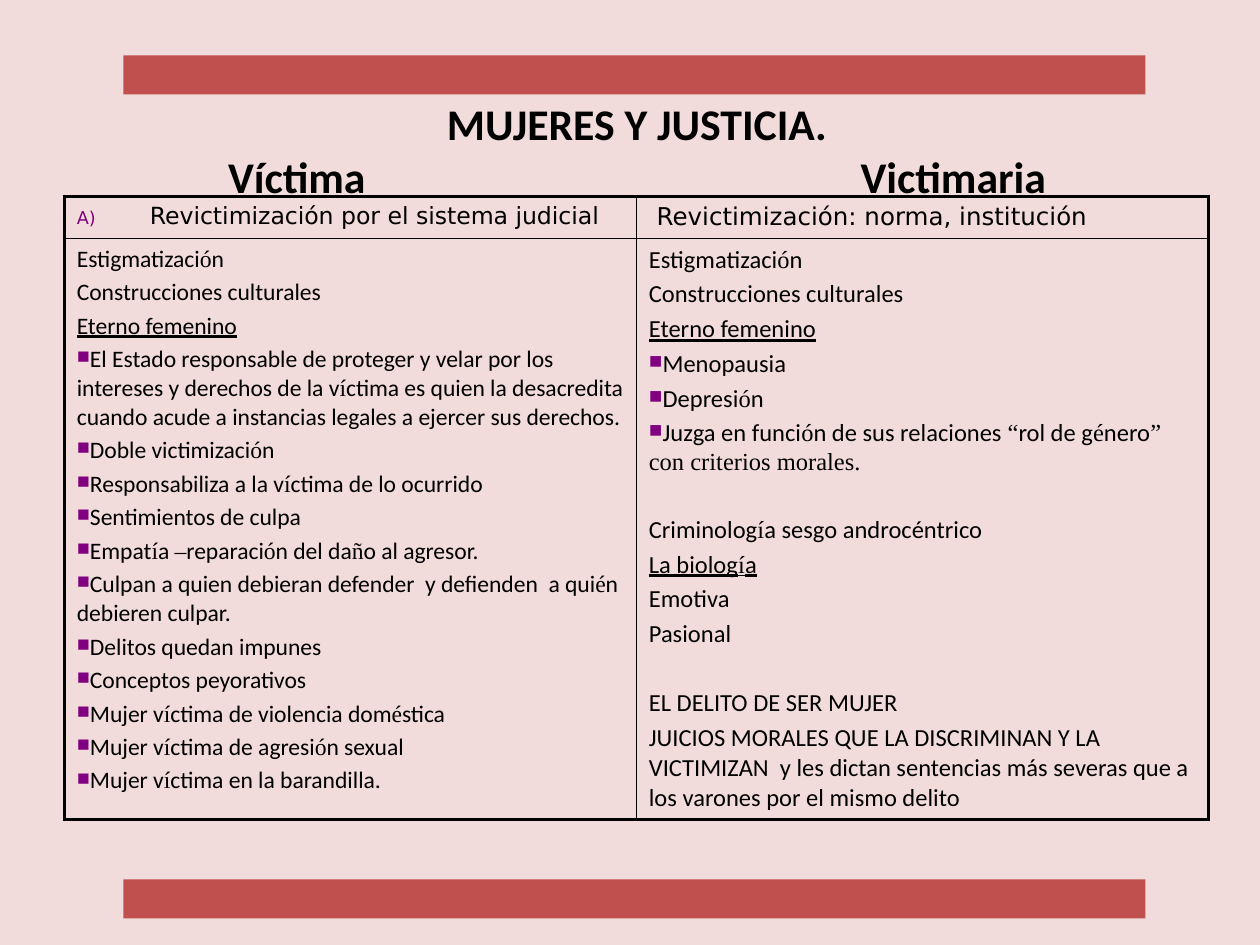
from lxml import etree
from pptx import Presentation
from pptx import util as u
from pptx.dml.color import RGBColor
from pptx.enum import shapes, text
from pptx.oxml import ns

COLORS = {"background": "F2DCDB", "bar": "C0504D", "ink": "000000", "bullet": "800080"}
BODY, HEADING, ACCENT = "Calibri", "DejaVu Sans", "Times New Roman"
OUTER, INNER = 2.25, 1

# Paragraph marks: "*" bullet, "_" underline, "^" blank line's gap above;
# text in braces takes the accent font.
VICTIM = [
    "Estigmatizaci{ó}n",
    "Construcciones culturales",
    "_Eterno femenino",
    "*El Estado responsable de proteger y velar por los intereses y derechos de la "
    "v{í}ctima es quien la desacredita cuando acude a instancias legales a ejercer "
    "sus derechos.",
    "*Doble victimizaci{ó}n",
    "*Responsabiliza a la v{í}ctima de lo ocurrido",
    "*Sentimientos de culpa",
    "*Empat{í}a {–}reparaci{ó}n del da{ñ}o al agresor.",
    "*Culpan a quien debieran defender  y defienden  a qui{é}n  debieren culpar.",
    "*Delitos quedan impunes",
    "*Conceptos peyorativos",
    "*Mujer v{í}ctima de violencia dom{é}stica",
    "*Mujer v{í}ctima de agresi{ó}n sexual",
    "*Mujer v{í}ctima en la barandilla.",
]
OFFENDER = [
    "Estigmatizaci{ó}n",
    "Construcciones culturales",
    "_Eterno femenino",
    "*Menopausia",
    "*Depresi{ó}n",
    "*Juzga en funci{ó}n de sus relaciones {“}rol de g{é}nero{” con criterios morales.}",
    "^Criminolog{í}a sesgo androcéntrico",
    "_La biolog{í}a",
    "Emotiva",
    "Pasional",
    "^EL DELITO DE SER MUJER",
    "JUICIOS MORALES QUE LA DISCRIMINAN Y LA VICTIMIZAN  y les dictan sentencias "
    "más severas que a los varones por el mismo delito",
]


def rgb(name):
    return RGBColor.from_string(COLORS[name])


def style(paragraph, size, name=BODY, bold=False):
    font = paragraph.font
    font.size, font.name, font.bold = u.Pt(size), name, bold
    font.color.rgb = rgb("ink")


def add_bullet(paragraph, tag, **attributes):
    props = paragraph._p.get_or_add_pPr()
    color = etree.SubElement(props, ns.qn("a:buClr"))
    etree.SubElement(color, ns.qn("a:srgbClr"), val=COLORS["bullet"])
    etree.SubElement(props, ns.qn("a:buSzPct"), val="75000")
    etree.SubElement(props, ns.qn(tag), **attributes)


def add_bar(slide, left, top, width, height):
    bar = slide.shapes.add_shape(shapes.MSO_SHAPE.RECTANGLE, left, top, width, height)
    bar.shadow.inherit = False
    bar.fill.solid()
    bar.fill.fore_color.rgb = rgb("bar")
    bar.line.fill.background()


def add_title(slide, left, top, width, height):
    frame = slide.shapes.add_textbox(left, top, width, height).text_frame
    frame.word_wrap = True
    frame.margin_left = frame.margin_right = frame.margin_top = frame.margin_bottom = 0
    title = frame.paragraphs[0]
    title.text = "MUJERES Y JUSTICIA."
    title.alignment = text.PP_ALIGN.CENTER
    # Column names sit on tab stops
    columns = frame.add_paragraph()
    columns.text = "\tVíctima\tVictimaria"
    columns.alignment = text.PP_ALIGN.LEFT
    tabs = etree.SubElement(columns._p.get_or_add_pPr(), ns.qn("a:tabLst"))
    for stop in (1.22, 6.24):
        etree.SubElement(tabs, ns.qn("a:tab"), pos=str(u.Inches(stop)), algn="l")
    for paragraph in (title, columns):
        style(paragraph, 25, bold=True)


def set_borders(cell, row, column):
    props = cell._tc.get_or_add_tcPr()
    edges = {"L": column == 0, "R": column == 1, "T": row == 0, "B": row == 1}
    for side, is_outer in edges.items():
        line = etree.SubElement(props, ns.qn(f"a:ln{side}"),
                                w=str(u.Pt(OUTER if is_outer else INNER)))
        fill = etree.SubElement(line, ns.qn("a:solidFill"))
        etree.SubElement(fill, ns.qn("a:srgbClr"), val=COLORS["ink"])
    cell.fill.background()


def fill_list(cell, items, size):
    frame = cell.text_frame
    for index, item in enumerate(items):
        paragraph = frame.add_paragraph() if index else frame.paragraphs[0]
        mark = item[0] if item[0] in "*_^" else ""
        if index:
            paragraph.space_before = u.Pt(22.6 if mark == "^" else size / 5)
        if mark == "*":
            add_bullet(paragraph, "a:buChar", char="■")
        style(paragraph, size)
        paragraph.font.underline = mark == "_"
        pieces = item[len(mark):].replace("}", "{").split("{")
        for order, piece in enumerate(pieces):
            if piece:
                run = paragraph.add_run()
                run.text = piece
                if order % 2:
                    run.font.name = ACCENT


def add_comparison(slide, left, top, width, height):
    header_height = u.Inches(0.33)
    table = slide.shapes.add_table(2, 2, left, top, width, height).table
    table.first_row = table.horz_banding = False
    table.rows[0].height, table.rows[1].height = header_height, height - header_height
    for column in table.columns:
        column.width = width // 2
    for row in range(2):
        for column in range(2):
            set_borders(table.cell(row, column), row, column)

    # Header row
    headings = [("Revictimización por el sistema judicial", 13.5),
                (" Revictimización: norma, institución", 14)]
    for column, (heading, size) in enumerate(headings):
        paragraph = table.cell(0, column).text_frame.paragraphs[0]
        paragraph.text = heading
        if column == 0:
            props = paragraph._p.get_or_add_pPr()
            props.set("marL", str(u.Inches(0.58)))
            props.set("indent", str(u.Inches(-0.58)))
            add_bullet(paragraph, "a:buAutoNum", type="alphaUcParenR")
        style(paragraph, size, HEADING)

    # Body row
    fill_list(table.cell(1, 0), VICTIM, 13.5)
    fill_list(table.cell(1, 1), OFFENDER, 14)


def main():
    deck = Presentation()
    deck.slide_width, deck.slide_height = u.Inches(10), u.Inches(7.5)
    slide = deck.slides.add_slide(deck.slide_layouts[6])
    slide.background.fill.solid()
    slide.background.fill.fore_color.rgb = rgb("background")

    add_title(slide, u.Inches(0.59), u.Inches(0.77), u.Inches(8.93), u.Inches(0.85))
    add_comparison(slide, u.Inches(0.51), u.Inches(1.56), u.Inches(9.08), u.Inches(4.94))
    for top in (6.98, 0.44):
        add_bar(slide, u.Inches(0.98), u.Inches(top), u.Inches(8.11), u.Inches(0.31))
    deck.save("out.pptx")


if __name__ == "__main__":
    main()
